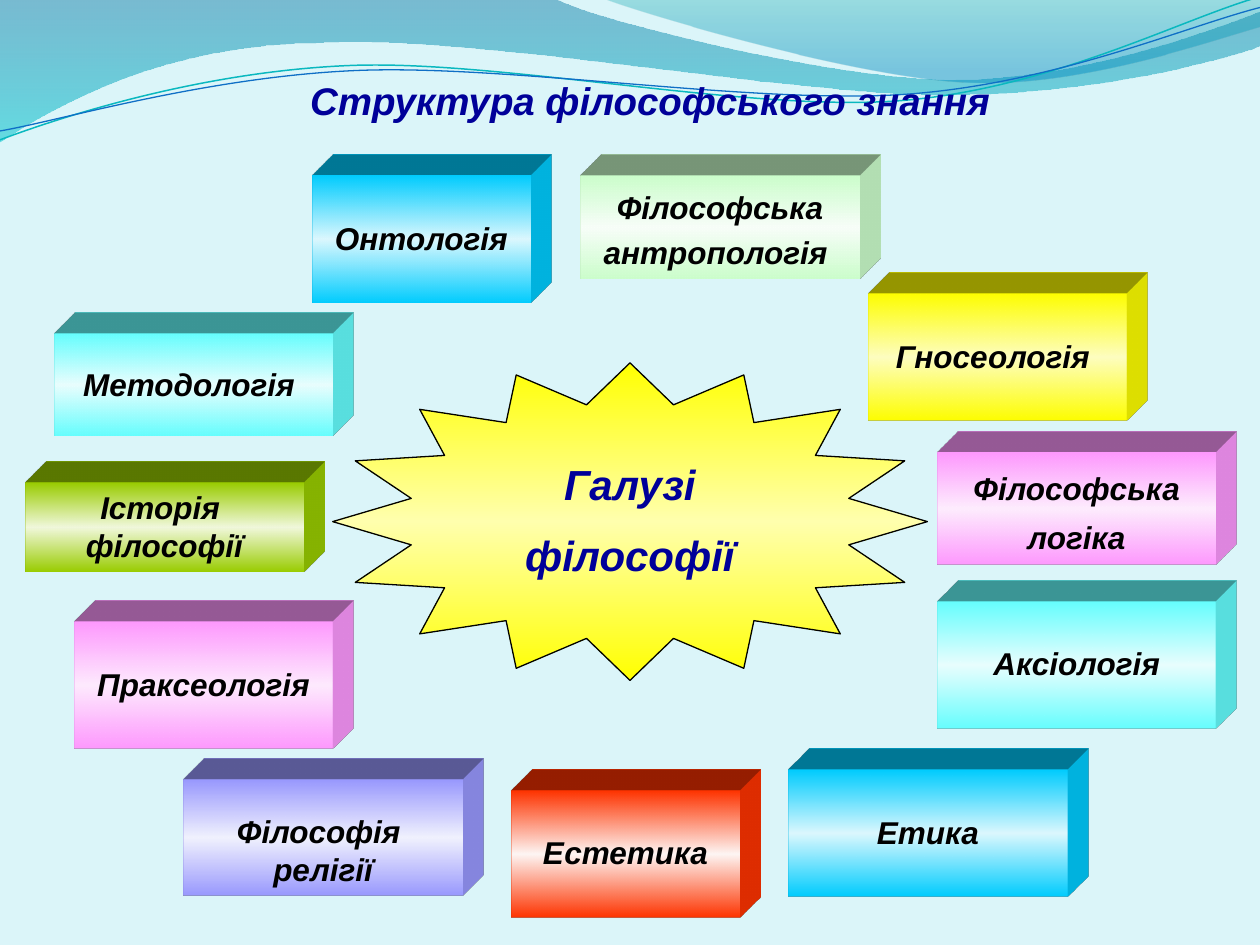
import math

import pptx
import pptx.util
from lxml import etree
from pptx.dml.color import RGBColor
from pptx.enum.shapes import MSO_SHAPE
from pptx.enum.text import MSO_ANCHOR, PP_ALIGN
from pptx.oxml.ns import qn
from pptx.util import Inches, Pt

TITLE = "Структура філософського знання"
CENTER = ["Галузі", "філософії"]
NAVY, BLACK = "000099", "000000"
DEPTH = 0.47

# paragraphs, (left, top, width, height), edge colour, middle colour, line spacing of first paragraph
BRANCHES = [
    (["Онтологія"], (2.48, 1.39, 1.73, 1.01), "00CCFF", "DBF8FF", 1),
    (["Філософська антропологія "], (4.61, 1.39, 2.21, 0.82), "CCFFCC", "F8FFF8", 1.2),
    (["Гносеологія "], (6.89, 2.33, 2.05, 1.01), "FFFF00", "FFFFBF", 1),
    (["Філософія ", "релігії"], (1.46, 6.19, 2.21, 0.92), "9999FF", "F1F1FF", 1.7),
    (["Філософська логіка"], (7.44, 3.59, 2.21, 0.89), "FF99FF", "FFECFF", 1.3),
    (["Аксіологія"], (7.44, 4.77, 2.21, 1.01), "66FFFF", "E9FFFF", 1),
    (["Етика"], (6.26, 6.11, 2.21, 1.01), "00CCFF", "DBF8FF", 1),
    (["Естетика"], (4.06, 6.27, 1.81, 1.01), "FF3300", "FFF5F3", 1),
    (["Методологія "], (0.43, 2.65, 2.21, 0.81), "66FFFF", "E9FFFF", 1),
    (["Історія ", "філософії"], (0.2, 3.83, 2.21, 0.71), "99CC00", "F1F8DB", 1),
    (["Праксеологія"], (0.59, 4.93, 2.05, 1.01), "FF99FF", "FFEAFF", 1),
]

# Each step is a line end (2 numbers) or a Bezier curve (6 numbers)
BANDS = [
    ([(0, -0.01), (4.4, -0.01), (4.76, 0.17, 6.64, 0.63, 7.58, 0.63),
      (8.53, 0.63, 9.58, 0.26, 10, 0.09), (10.01, 0.36),
      (9.83, 0.44, 8.7, 0.76, 7.46, 0.75), (6.22, 0.75, 3.82, 0.28, 2.57, 0.34),
      (1.29, 0.35, 0.46, 0.83, -0.01, 1.13)],
     [(0, "0074A1", 45), (100, "00C6CF", 55)]),
    ([(4.79, -0.01), (5.09, 0.11, 6.82, 0.62, 7.69, 0.65),
      (8.56, 0.69, 9.61, 0.32, 10, 0.21), (10, 0)],
     [(0, "00A1A9", 30), (80, "008BBF", 45)]),
]
WAVE_TILT = -2.7
# steps as seen when tilted, centre of the tilt, colour, line width
WAVES = [
    ([(0, 1.11), (0.48, 0.93, 1.58, 0.57, 2.77, 0.52), (3.95, 0.47, 5.93, 0.89, 7.13, 0.8),
      (8.33, 0.71, 9.38, 0.15, 9.98, -0.02)], (4.99, 0.57), "0AB8BF", 0.85),
    ([(0, 1.04), (0.47, 0.96, 1.64, 0.61, 2.83, 0.56), (4.03, 0.51, 5.97, 0.83, 7.17, 0.75),
      (8.36, 0.67, 9.41, 0.21, 10, 0.06)], (5, 0.59), "0F6FC6", 0.75),
]


def rgb(color):
    return RGBColor.from_string(color)


def set_gradient(sp, stops):
    """Vertical gradient from (position %, colour, opacity %) stops."""
    sp.fill.gradient()
    sp.fill.gradient_angle = 270
    gs_list = next(sp.element.iter(qn("a:gsLst")))
    for old in list(gs_list):
        gs_list.remove(old)
    for pos, color, opacity in stops:
        gs = etree.SubElement(gs_list, qn("a:gs"), pos=str(pos * 1000))
        clr = etree.SubElement(gs, qn("a:srgbClr"), val=color)
        if opacity < 100:
            etree.SubElement(clr, qn("a:alpha"), val=str(opacity * 1000))


def shine(sp, edge, middle):
    set_gradient(sp, [(0, edge, 100), (50, middle, 100), (100, edge, 100)])


def rotate(steps, center, degrees):
    cx, cy = center
    cos, sin = math.cos(math.radians(degrees)), math.sin(math.radians(degrees))
    turned = []
    for step in steps:
        pairs = [(x - cx, y - cy) for x, y in zip(step[::2], step[1::2])]
        turned.append([v for x, y in pairs
                       for v in (cx + x * cos - y * sin, cy + x * sin + y * cos)])
    return turned


def add_curve(s, steps, close=True):
    """Freeform whose six-number steps become Bezier curves."""
    emu = [(Inches(x), Inches(y)) for step in steps for x, y in zip(step[::2], step[1::2])]
    builder = s.shapes.build_freeform(*emu[0], scale=1.0)
    builder.add_line_segments(emu[1:], close=close)
    sp = builder.convert_to_shape()
    sp.shadow.inherit = False
    sp.line.fill.background()
    lines = iter(list(sp.element.iter(qn("a:lnTo"))))
    for step in steps[1:]:
        first = next(lines)
        if len(step) == 6:
            curve = etree.Element(qn("a:cubicBezTo"))
            first.addprevious(curve)
            for line in (first, next(lines), next(lines)):
                curve.append(line[0])
                line.getparent().remove(line)
    return sp


def extrude(sp, color):
    """Give the shape depth towards the top right."""
    sp_pr = sp.element.spPr
    scene = etree.SubElement(sp_pr, qn("a:scene3d"))
    etree.SubElement(scene, qn("a:camera"), prst="legacyObliqueTopRight")
    etree.SubElement(scene, qn("a:lightRig"), rig="legacyFlat3", dir="b")
    solid = etree.SubElement(sp_pr, qn("a:sp3d"), extrusionH=str(Inches(DEPTH)),
                             prstMaterial="legacyMatte")
    for bevel in ("a:bevelT", "a:bevelB"):
        etree.SubElement(solid, qn(bevel), w="13500", h="13500", prst="angle")
    clr = etree.SubElement(solid, qn("a:extrusionClr"))
    etree.SubElement(clr, qn("a:srgbClr"), val=color)


def write(tf, paragraphs, size, color):
    tf.vertical_anchor = MSO_ANCHOR.MIDDLE
    for i, text in enumerate(paragraphs):
        p = tf.add_paragraph() if i else tf.paragraphs[0]
        p.text = text
        p.alignment = PP_ALIGN.CENTER
        p.font.name, p.font.size = "Arial", Pt(size)
        p.font.bold = p.font.italic = True
        p.font.color.rgb = rgb(color)


def add_block(s, paragraphs, box, edge, middle, spacing):
    sp = s.shapes.add_shape(MSO_SHAPE.RECTANGLE, *map(Inches, box))
    sp.shadow.inherit = False
    sp.line.fill.background()
    shine(sp, edge, middle)
    extrude(sp, edge)
    tf = sp.text_frame
    tf.word_wrap = True
    tf.margin_left = tf.margin_right = 0
    tf.margin_bottom = Inches(0.07)
    write(tf, paragraphs, 18, BLACK)
    tf.paragraphs[0].line_spacing = float(spacing)


def main():
    prs = pptx.Presentation()
    prs.slide_width, prs.slide_height = Inches(10), Inches(7.5)
    s = prs.slides.add_slide(prs.slide_layouts[5])
    s.background.fill.solid()
    s.background.fill.fore_color.rgb = rgb("DBF5F9")

    for steps, stops in BANDS:
        set_gradient(add_curve(s, steps), stops)
    for steps, center, color, width in WAVES:
        wave = add_curve(s, rotate(steps, center, -WAVE_TILT), close=False)
        wave.rotation = WAVE_TILT
        wave.fill.background()
        wave.line.color.rgb = rgb(color)
        wave.line.width = Pt(width)

    star = s.shapes.add_shape(MSO_SHAPE.STAR_16_POINT, *map(Inches, (2.64, 2.88, 4.72, 2.52)))
    star.adjustments[0] = 0.375
    star.shadow.inherit = False
    shine(star, "FFFF00", "FFFFAD")
    star.line.color.rgb = rgb(BLACK)
    star.line.width = Pt(0.75)

    title = s.shapes.title
    title.left, title.top, title.width, title.height = map(Inches, (0.67, 0.6, 8.98, 0.39))
    write(title.text_frame, [TITLE], 22, NAVY)
    title.text_frame.word_wrap = False
    s.shapes.element.append(title.element)  # in front of the waves

    label = s.shapes.add_textbox(*map(Inches, (3.82, 3.59, 2.36, 1.1)))
    label.text_frame.word_wrap = True
    write(label.text_frame, CENTER, 24, NAVY)
    label.text_frame.vertical_anchor = MSO_ANCHOR.TOP
    for p in label.text_frame.paragraphs:
        p.space_before = Pt(12)

    for branch in BRANCHES:
        add_block(s, *branch)

    prs.save("out.pptx")


if __name__ == "__main__":
    main()
